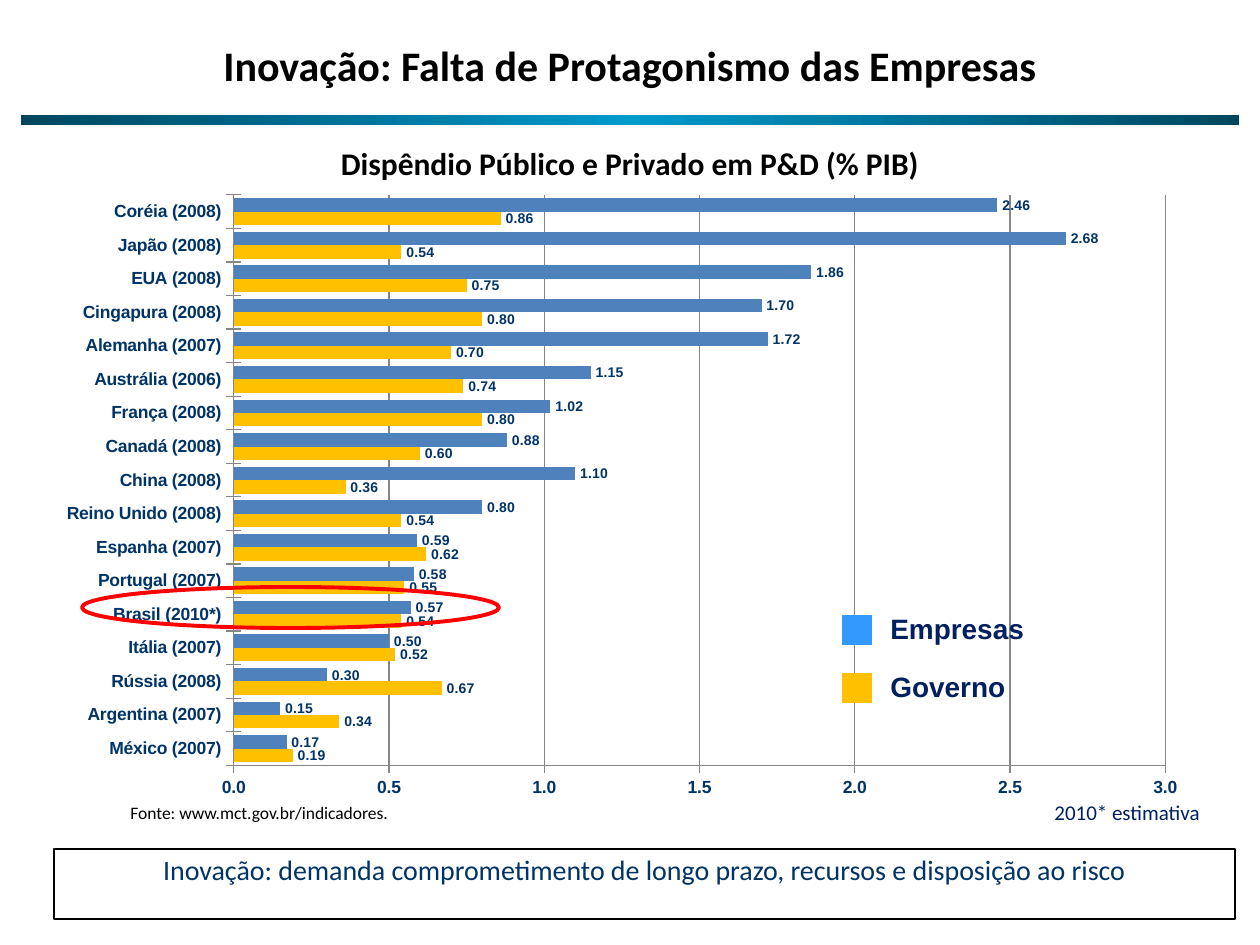
"""Build a slide on public and private R&D spending by country."""
from copy import deepcopy
from pptx import Presentation
from pptx.chart.data import CategoryChartData
from pptx.dml.color import RGBColor
from pptx.enum.chart import XL_CHART_TYPE, XL_LABEL_POSITION, XL_TICK_MARK
from pptx.enum.shapes import MSO_SHAPE
from pptx.enum.text import MSO_ANCHOR, PP_ALIGN
from pptx.oxml import parse_xml
from pptx.oxml.ns import nsdecls, qn
from pptx.util import Pt

RECT, OVAL = MSO_SHAPE.RECTANGLE, MSO_SHAPE.OVAL
LEFT, MID = PP_ALIGN.LEFT, PP_ALIGN.CENTER
TOP, CENTER = MSO_ANCHOR.TOP, MSO_ANCHOR.MIDDLE
BARS, OUT = XL_CHART_TYPE.BAR_CLUSTERED, XL_LABEL_POSITION.OUTSIDE_END
CROSS = XL_TICK_MARK.CROSS

HEX = {"black": "000000", "navy": "003366", "ink": "002060", "red": "FF0000",
       "gold": "FFC000", "blue": "4F81BD", "sky": "3399FF",
       "teal": "00475E", "cyan": "0099CC", "gray": "868686"}
TITLE = "Inovação: Falta de Protagonismo das Empresas"
HEAD = "Dispêndio Público e Privado em P&D (% PIB)"
SOURCE = "Fonte: www.mct.gov.br/indicadores."
NOTE = "2010* estimativa"
CLAIM = "Inovação: demanda comprometimento de longo prazo, recursos e disposição ao risco"
LEGEND = [("Empresas", "sky"), ("Governo", "gold")]
SERIES = [("Governo", "gold"), ("Empresas", "blue")]
ROWS = [
    ("México (2007)", 0.19, 0.17), ("Argentina (2007)", 0.34, 0.15),
    ("Rússia (2008)", 0.67, 0.30), ("Itália (2007)", 0.52, 0.50),
    ("Brasil (2010*)", 0.54, 0.57), ("Portugal (2007)", 0.55, 0.58),
    ("Espanha (2007)", 0.62, 0.59), ("Reino Unido (2008)", 0.54, 0.80),
    ("China (2008)", 0.36, 1.10), ("Canadá (2008)", 0.60, 0.88),
    ("França (2008)", 0.80, 1.02), ("Austrália (2006)", 0.74, 1.15),
    ("Alemanha (2007)", 0.70, 1.72), ("Cingapura (2008)", 0.80, 1.70),
    ("EUA (2008)", 0.75, 1.86), ("Japão (2008)", 0.54, 2.68),
    ("Coréia (2008)", 0.86, 2.46),
]
CHART = (44, 183, 1150, 627)
PLOT = (234, 195, 926, 571)


def px(*vals):
    return [round(v * 914400 / 126) for v in vals]


def rgb(name):
    return RGBColor.from_string(HEX[name])


def style(font, size, color, bold=False, name="Calibri"):
    for key, val in {"size": Pt(size), "bold": bold, "name": name}.items():
        setattr(font, key, val)
    font.color.rgb = rgb(color)


def write(shape, text, size, color, bold=False, name="Calibri", align=LEFT, anchor=TOP):
    frame = shape.text_frame
    frame.word_wrap, frame.vertical_anchor = True, anchor
    para = frame.paragraphs[0]
    para.text, para.alignment = text, align
    style(para.runs[0].font, size, color, bold, name)
    return para


def label(shapes, box, *args, **opts):
    write(shapes.add_textbox(*px(*box)), *args, **opts)


def draw(shapes, kind, box, fill=None, line=None, width=1):
    shape = shapes.add_shape(kind, *px(*box))
    shape.shadow.inherit = False
    for part, color in ((shape.fill, fill), (shape.line.fill, line)):
        if color:
            part.solid()
            part.fore_color.rgb = rgb(color)
        else:
            part.background()
    if line:
        shape.line.width = Pt(width)
    return shape


def blend(shape, colors):
    fill = shape.fill
    fill.gradient()
    fill.gradient_angle = 0
    stops = shape._element.spPr.find(".//" + qn("a:gsLst"))
    stops.append(deepcopy(stops[0]))
    for i, (stop, color) in enumerate(zip(fill.gradient_stops, colors)):
        stop.position = i / (len(colors) - 1)
        stop.color.rgb = rgb(color)


def place(chart):
    left, top, wide, high = CHART
    spots = {"x": (PLOT[0] - left) / wide, "y": (PLOT[1] - top) / high,
             "w": PLOT[2] / wide, "h": PLOT[3] / high}
    inner = "".join(f'<c:{k} val="{v:.2f}"/>' if k in "wh" else f'<c:{k} val="{v:.3f}"/>'
                    for k, v in spots.items())
    area = chart._chartSpace.chart.plotArea
    for old in area.findall(qn("c:layout")):
        area.remove(old)
    area.insert(0, parse_xml(
        f'<c:layout {nsdecls("c")}><c:manualLayout><c:layoutTarget val="inner"/>'
        f'<c:xMode val="edge"/><c:yMode val="edge"/>{inner}'
        '</c:manualLayout></c:layout>'))


def plot(shapes):
    data = CategoryChartData(number_format="0.00")
    cats, *cols = zip(*ROWS)
    data.categories = cats
    for (name, _), vals in zip(SERIES, cols):
        data.add_series(name, vals)
    chart = shapes.add_chart(BARS, *px(*CHART), data).chart
    chart.has_legend = chart.has_title = False
    style(chart.font, 10, "black", name="Arial")
    bars = chart.plots[0]
    for key, val in {"gap_width": 50, "overlap": 0, "vary_by_categories": False}.items():
        setattr(bars, key, val)
    for part, (_, color) in zip(bars.series, SERIES):
        part.format.fill.solid()
        part.format.fill.fore_color.rgb = rgb(color)
        tags = part.data_labels
        for key, val in {"show_value": True, "position": OUT, "number_format": "#,##0.00",
                         "number_format_is_linked": False}.items():
            setattr(tags, key, val)
        style(tags.font, 8, "navy", True, "Arial")
    axis = chart.value_axis
    for key, val in {"minimum_scale": 0, "maximum_scale": 3, "major_unit": 0.5,
                     "has_major_gridlines": True}.items():
        setattr(axis, key, val)
    axis.tick_labels.number_format = "#,##0.0"
    axis.tick_labels.number_format_is_linked = False
    axis.major_gridlines.format.line.color.rgb = rgb("gray")
    for each in (axis, chart.category_axis):
        each.major_tick_mark = CROSS
        each.format.line.color.rgb = rgb("gray")
        style(each.tick_labels.font, 10, "navy", True, "Arial")
    place(chart)


def main():
    deck = Presentation()
    deck.slide_width, deck.slide_height = px(1260, 945)
    slide = deck.slides.add_slide(deck.slide_layouts[5])
    shapes = slide.shapes
    title = shapes.title
    for key, val in zip(("left", "top", "width", "height"), px(0, 23, 1260, 83)):
        setattr(title, key, val)
    write(title, TITLE, 24, "black", True, align=MID, anchor=CENTER)
    plot(shapes)
    draw(shapes, OVAL, (82, 587, 417, 41), line="red", width=2.25)
    label(shapes, (118, 796, 1016, 34), SOURCE, 10, "black")
    claim = draw(shapes, RECT, (54, 849, 1181, 70), line="black", width=1.25)
    write(claim, CLAIM, 16, "navy", align=MID).line_spacing = 0.95
    blend(draw(shapes, RECT, (21, 115, 1218, 10)), ("teal", "cyan", "teal"))
    label(shapes, (0, 137, 1260, 51), HEAD, 18, "black", True, align=MID, anchor=CENTER)
    group = shapes.add_group_shape().shapes
    for i, (name, color) in enumerate(LEGEND):
        top = 615 + 58 * i
        draw(group, RECT, (842, top, 30, 30), color)
        label(group, (878, top - 10, 248, 47), name, 16, "ink", True, "Arial")
    label(shapes, (1042, 793, 218, 38), NOTE, 12, "ink")
    deck.save("out.pptx")


if __name__ == "__main__":
    main()
